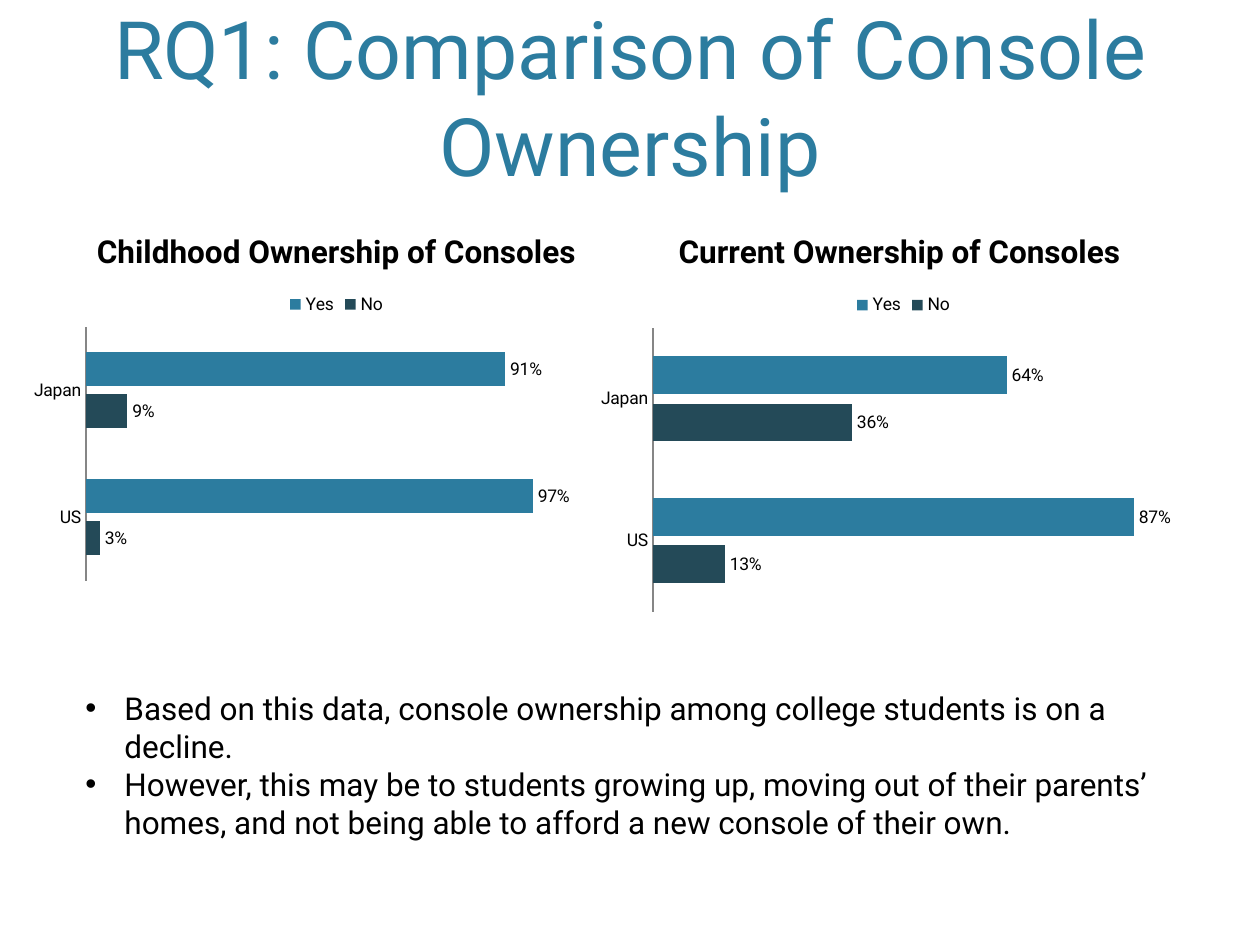
from pptx import Presentation
from pptx.chart.data import CategoryChartData
from pptx.dml.color import RGBColor
from pptx.enum.chart import (XL_CHART_TYPE, XL_LABEL_POSITION as LabelPos,
                             XL_LEGEND_POSITION as LegendPos, XL_TICK_MARK as Tick)
from pptx.enum.text import MSO_ANCHOR as Anchor, PP_ALIGN as Align
from pptx.oxml.xmlchemy import OxmlElement
from pptx.util import Inches, Pt

# Content
TITLE = "RQ1: Comparison of Console Ownership"
COUNTRIES = ["US", "Japan"]
CHARTS = [
    {"title": "Childhood Ownership of Consoles", "No": [0.03, 0.09],
     "Yes": [0.97, 0.91], "height": 3, "max": 1.2},
    {"title": "Current Ownership of Consoles ", "No": [0.13, 0.36],
     "Yes": [0.87, 0.64], "height": 3.25, "max": 1},
]
BULLETS = [
    "Based on this data, console ownership among college students is on a decline.",
    "However, this may be to students growing up, moving out of their parents’ "
    "homes, and not being able to afford a new console of their own.",
]

# Look and grid, in inches
COLORS = {"Title": "2C7C9F", "Yes": "2C7C9F", "No": "244A58",
          "text": "000000", "axis": "868686"}
FONT = "Roboto"
W, H = 10, 7.5
CHART_LEFT, CHART_TOP, CHART_W, CHART_STEP = 0.17, 1.67, 5, 4.5
INDENT = 0.31


def color(name):
    return RGBColor.from_string(COLORS[name])


def style(font, size, name="text", bold=False):
    font.name, font.size, font.bold = FONT, Pt(size), bold
    font.color.rgb = color(name)


def write(p, text, size, name="text", bold=False, align=None):
    r = p.add_run()
    r.text = text
    style(r.font, size, name, bold)
    if align is not None:
        p.alignment = align


def add_bullet(p):
    pPr = p._p.get_or_add_pPr()
    pPr.set("marL", str(Inches(INDENT)))
    pPr.set("indent", str(-Inches(INDENT)))
    for tag, key, value in (("a:buFont", "typeface", "Arial"),
                            ("a:buChar", "char", "•")):
        el = OxmlElement(tag)
        el.set(key, value)
        pPr.append(el)


def add_bar_chart(slide, item, left):
    data = CategoryChartData(number_format="0%")
    data.categories = COUNTRIES
    for answer in ("No", "Yes"):
        data.add_series(answer, item[answer])
    chart = slide.shapes.add_chart(
        XL_CHART_TYPE.BAR_CLUSTERED, Inches(left), Inches(CHART_TOP),
        Inches(CHART_W), Inches(item["height"]), data).chart
    style(chart.font, 10)
    write(chart.chart_title.text_frame.paragraphs[0], item["title"], 18, bold=True)
    chart.has_legend = True
    chart.legend.position = LegendPos.TOP
    chart.legend.include_in_layout = False

    # Axes
    cat, val = chart.category_axis, chart.value_axis
    cat.major_tick_mark = cat.minor_tick_mark = Tick.NONE
    cat.format.line.color.rgb = color("axis")
    val.has_major_gridlines = False
    val.visible = False
    val.minimum_scale, val.maximum_scale = 0, item["max"]

    # Bars and their labels
    plot = chart.plots[0]
    plot.gap_width, plot.overlap, plot.vary_by_categories = 150, -25, False
    for ser in plot.series:
        ser.format.fill.solid()
        ser.format.fill.fore_color.rgb = color(ser.name)
        labels = ser.data_labels
        labels.show_value = True
        labels.number_format, labels.number_format_is_linked = "0%", False
        labels.position = LabelPos.OUTSIDE_END
        style(labels.font, 10)


prs = Presentation()
prs.slide_width, prs.slide_height = Inches(W), Inches(H)
slide = prs.slides.add_slide(prs.slide_layouts[5])

# Title
title = slide.shapes.title
title.left, title.top, title.width, title.height = map(Inches, (0.6, 0.12, 8.8, 1.46))
tf = title.text_frame
tf.word_wrap, tf.vertical_anchor = True, Anchor.BOTTOM
write(tf.paragraphs[0], TITLE, 46, "Title", align=Align.CENTER)

# Charts side by side
for i, item in enumerate(CHARTS):
    add_bar_chart(slide, item, CHART_LEFT + i * CHART_STEP)

# Conclusions
tf = slide.shapes.add_textbox(*map(Inches, (0.58, 5.42, 8.83, 1.62))).text_frame
tf.word_wrap = True
for i, text in enumerate(BULLETS):
    p = tf.add_paragraph() if i else tf.paragraphs[0]
    write(p, text, 18)
    add_bullet(p)

prs.save("out.pptx")
